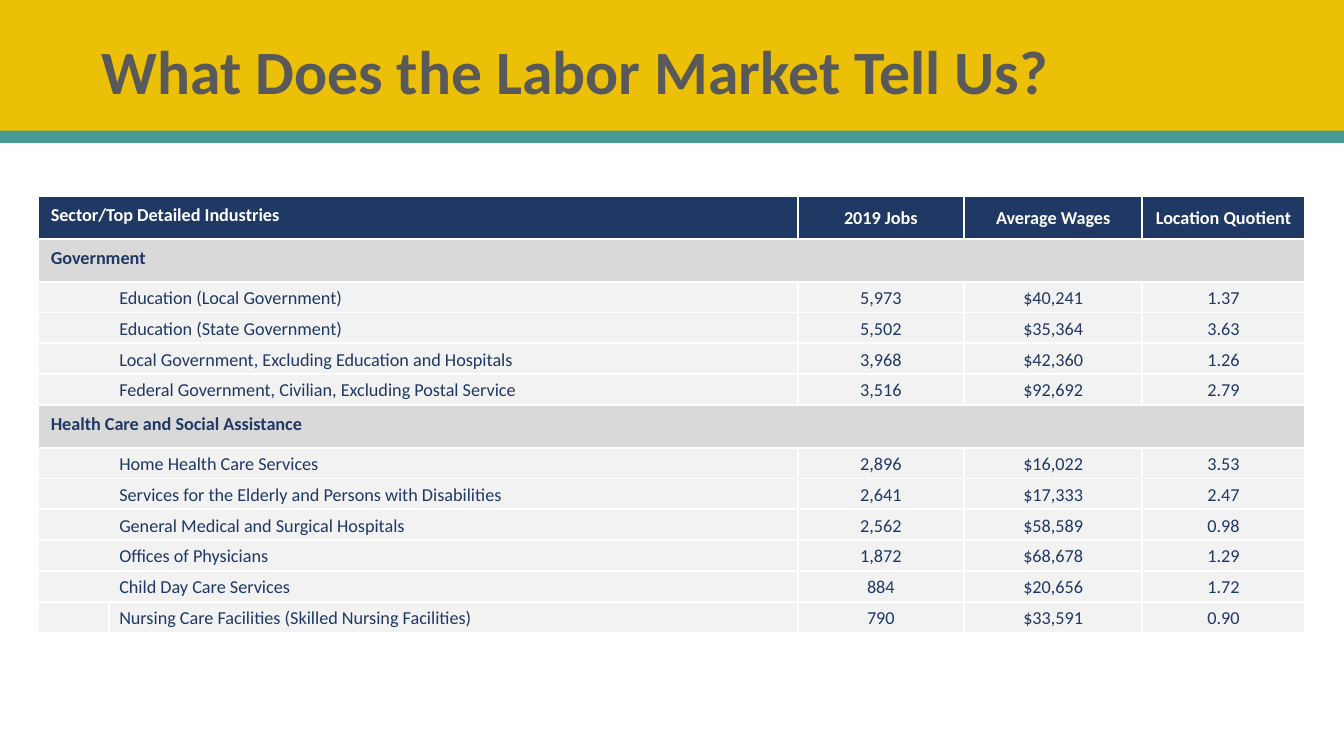
from lxml.etree import SubElement
from pptx import Presentation
from pptx.dml.color import RGBColor
from pptx.enum.shapes import MSO_SHAPE
from pptx.enum.text import MSO_ANCHOR, MSO_AUTO_SIZE, PP_ALIGN
from pptx.oxml.ns import qn
from pptx.util import Pt

GOLD = RGBColor(0xEC, 0xC0, 0x07)
TEAL = RGBColor(0x46, 0x9C, 0x95)
GREY = RGBColor(0x59, 0x59, 0x59)
NAVY = RGBColor(0x1F, 0x38, 0x64)
WHITE = RGBColor(0xFF, 0xFF, 0xFF)
SECTOR_FILL = RGBColor(0xD9, 0xD9, 0xD9)
DETAIL_FILL = RGBColor(0xF2, 0xF2, 0xF2)

FONT = "Calibri"
TEXT_SIZE = Pt(13)
PAGE_WIDTH = Pt(960)
TALL_ROW, DETAIL_ROW = Pt(30.6), Pt(22)
COLUMN_WIDTHS = [Pt(51.1), Pt(491.8), Pt(118.8), Pt(127.4), Pt(115.9)]
SIDES = ("L", "R", "T", "B")

HEADINGS = ["Sector/Top Detailed Industries", "2019 Jobs", "Average Wages", "Location Quotient"]
SECTORS = {
    "Government": [
        ("Education (Local Government)", "5,973", "$40,241", "1.37"),
        ("Education (State Government)", "5,502", "$35,364", "3.63"),
        ("Local Government, Excluding Education and Hospitals", "3,968", "$42,360", "1.26"),
        ("Federal Government, Civilian, Excluding Postal Service", "3,516", "$92,692", "2.79"),
    ],
    "Health Care and Social Assistance": [
        ("Home Health Care Services", "2,896", "$16,022", "3.53"),
        ("Services for the Elderly and Persons with Disabilities", "2,641", "$17,333", "2.47"),
        ("General Medical and Surgical Hospitals", "2,562", "$58,589", "0.98"),
        ("Offices of Physicians", "1,872", "$68,678", "1.29"),
        ("Child Day Care Services", "884", "$20,656", "1.72"),
        ("Nursing Care Facilities (Skilled Nursing Facilities)", "790", "$33,591", "0.90"),
    ],
}

WIDE_CELL = dict(margin_left=Pt(9.36), margin_right=Pt(9.36), margin_top=Pt(5.04),
                 margin_bottom=Pt(5.04), vertical_anchor=MSO_ANCHOR.TOP)
SLIM_CELL = dict(margin_left=Pt(7.2), margin_right=Pt(7.2), margin_top=Pt(0.72),
                 margin_bottom=Pt(0), vertical_anchor=MSO_ANCHOR.MIDDLE)


def apply(target, values):
    for name, value in values.items():
        setattr(target, name, value)


def add_band(page, top, height, color):
    band = page.shapes.add_shape(MSO_SHAPE.RECTANGLE, Pt(0), top, PAGE_WIDTH, height)
    band.shadow.inherit = False
    band.fill.solid()
    band.fill.fore_color.rgb = color
    band.line.fill.background()


def format_title(title, text):
    apply(title, dict(left=Pt(65.5), top=Pt(1.4), width=Pt(828), height=Pt(104.4)))
    frame = title.text_frame
    apply(frame, dict(text=text, word_wrap=True, auto_size=MSO_AUTO_SIZE.NONE,
                      vertical_anchor=MSO_ANCHOR.MIDDLE))
    para = frame.paragraphs[0]
    apply(para, dict(alignment=PP_ALIGN.LEFT, line_spacing=0.9))
    span = para.runs[0]
    apply(span.font, dict(name=FONT, size=Pt(44), bold=True))
    span.font.color.rgb = GREY
    # Bring the title in front of the bands
    title.element.getparent().append(title.element)


def set_borders(cell, open_side=None):
    properties = cell._tc.get_or_add_tcPr()
    for side in SIDES:
        line = SubElement(properties, qn(f"a:ln{side}"), w=str(Pt(1.5)))
        if side == open_side:
            SubElement(line, qn("a:noFill"))
        else:
            fill = SubElement(line, qn("a:solidFill"))
            SubElement(fill, qn("a:srgbClr"), val=str(WHITE))


def fill_cell(cell, text, layout, fill, color=NAVY, bold=False, centred=False, open_side=None):
    set_borders(cell, open_side)
    cell.fill.solid()
    cell.fill.fore_color.rgb = fill
    apply(cell, layout)
    para = cell.text_frame.paragraphs[0]
    apply(para, dict(alignment=PP_ALIGN.CENTER if centred else PP_ALIGN.LEFT, line_spacing=1.07))
    if text:
        span = para.add_run()
        span.text = text
        apply(span.font, dict(name=FONT, size=TEXT_SIZE, bold=bold))
        span.font.color.rgb = color
    else:
        # Keep empty cells from stretching their row
        SubElement(para._p, qn("a:endParaRPr"), sz=str(int(TEXT_SIZE.pt * 100)))


def fill_header(table):
    table.rows[0].height = TALL_ROW
    style = dict(fill=NAVY, color=WHITE, bold=True)
    for column in range(len(COLUMN_WIDTHS)):
        text = HEADINGS[max(column - 1, 0)] if column != 1 else ""
        layout = WIDE_CELL if column < 2 else SLIM_CELL
        fill_cell(table.cell(0, column), text, layout, centred=column > 1, **style)
    table.cell(0, 0).merge(table.cell(0, 1))


def fill_sector(table, row, name):
    table.rows[row].height = TALL_ROW
    last = len(COLUMN_WIDTHS) - 1
    for column in range(last + 1):
        fill_cell(table.cell(row, column), "" if column else name, WIDE_CELL, SECTOR_FILL, bold=True)
    table.cell(row, 0).merge(table.cell(row, last))


def fill_detail(table, row, values):
    table.rows[row].height = DETAIL_ROW
    # The indent column is divided from the names only in the last row
    divided = row == len(table.rows) - 1
    open_sides = {} if divided else {0: "R", 1: "L"}
    for column, text in enumerate(("", *values)):
        fill_cell(table.cell(row, column), text, SLIM_CELL, DETAIL_FILL,
                  centred=column > 1, open_side=open_sides.get(column))


def add_industry_table(page):
    details = sum(len(industries) for industries in SECTORS.values())
    tall = 1 + len(SECTORS)
    frame = page.shapes.add_table(tall + details, len(COLUMN_WIDTHS), Pt(26.9), Pt(140),
                                  sum(COLUMN_WIDTHS), tall * TALL_ROW + details * DETAIL_ROW)
    table = frame.table
    table.horz_banding = False
    for column, width in zip(table.columns, COLUMN_WIDTHS):
        column.width = width
    fill_header(table)
    row = 1
    for sector, industries in SECTORS.items():
        fill_sector(table, row, sector)
        for offset, values in enumerate(industries, start=1):
            fill_detail(table, row + offset, values)
        row += len(industries) + 1


def main():
    deck = Presentation()
    apply(deck, dict(slide_width=PAGE_WIDTH, slide_height=Pt(540)))
    page = deck.slides.add_slide(deck.slide_layouts[5])
    # Header
    add_band(page, Pt(0), Pt(101.5), GOLD)
    add_band(page, Pt(93.4), Pt(8.8), TEAL)
    format_title(page.shapes.title, "What Does the Labor Market Tell Us?")
    # Labor market figures
    add_industry_table(page)
    deck.save("out.pptx")


if __name__ == "__main__":
    main()
